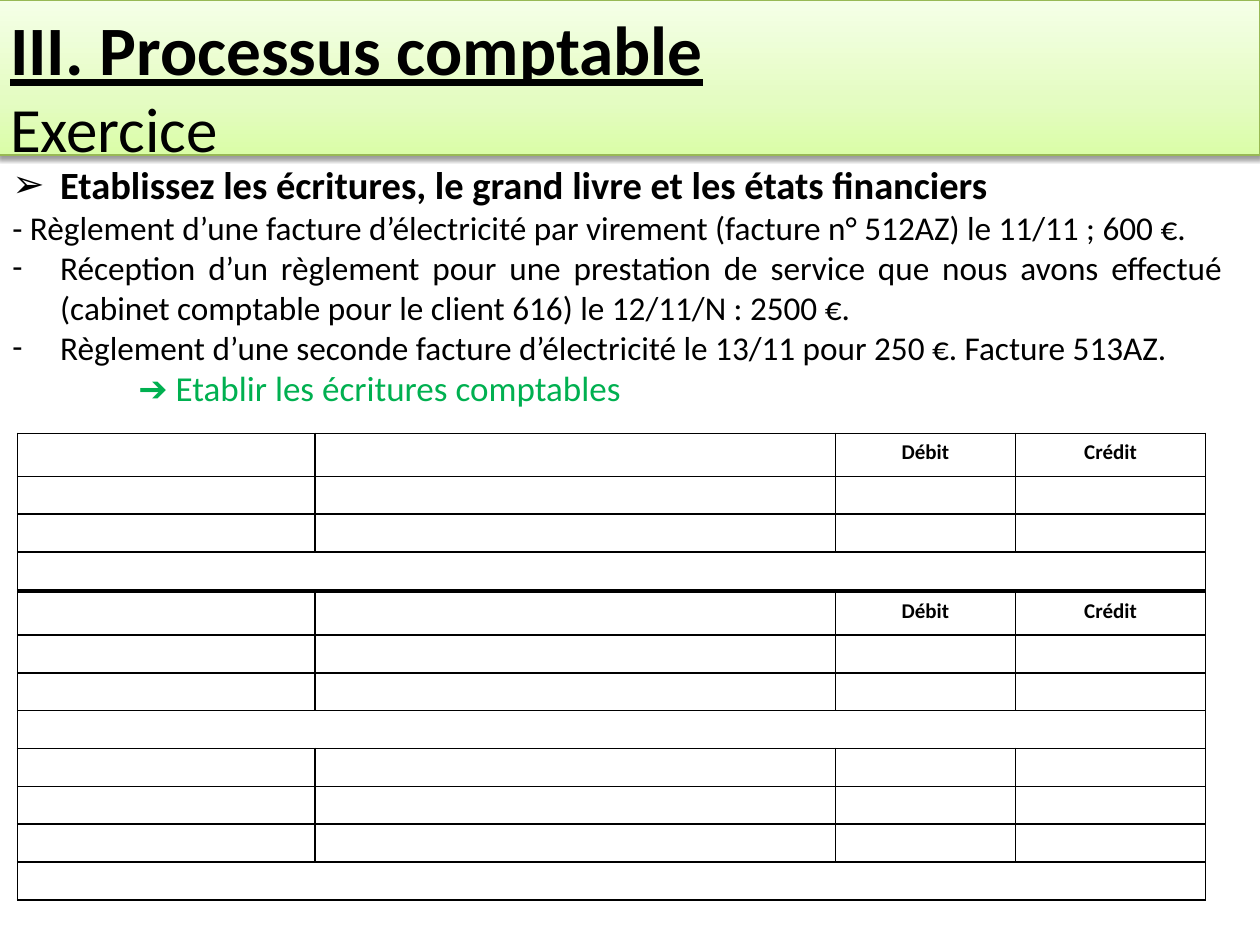
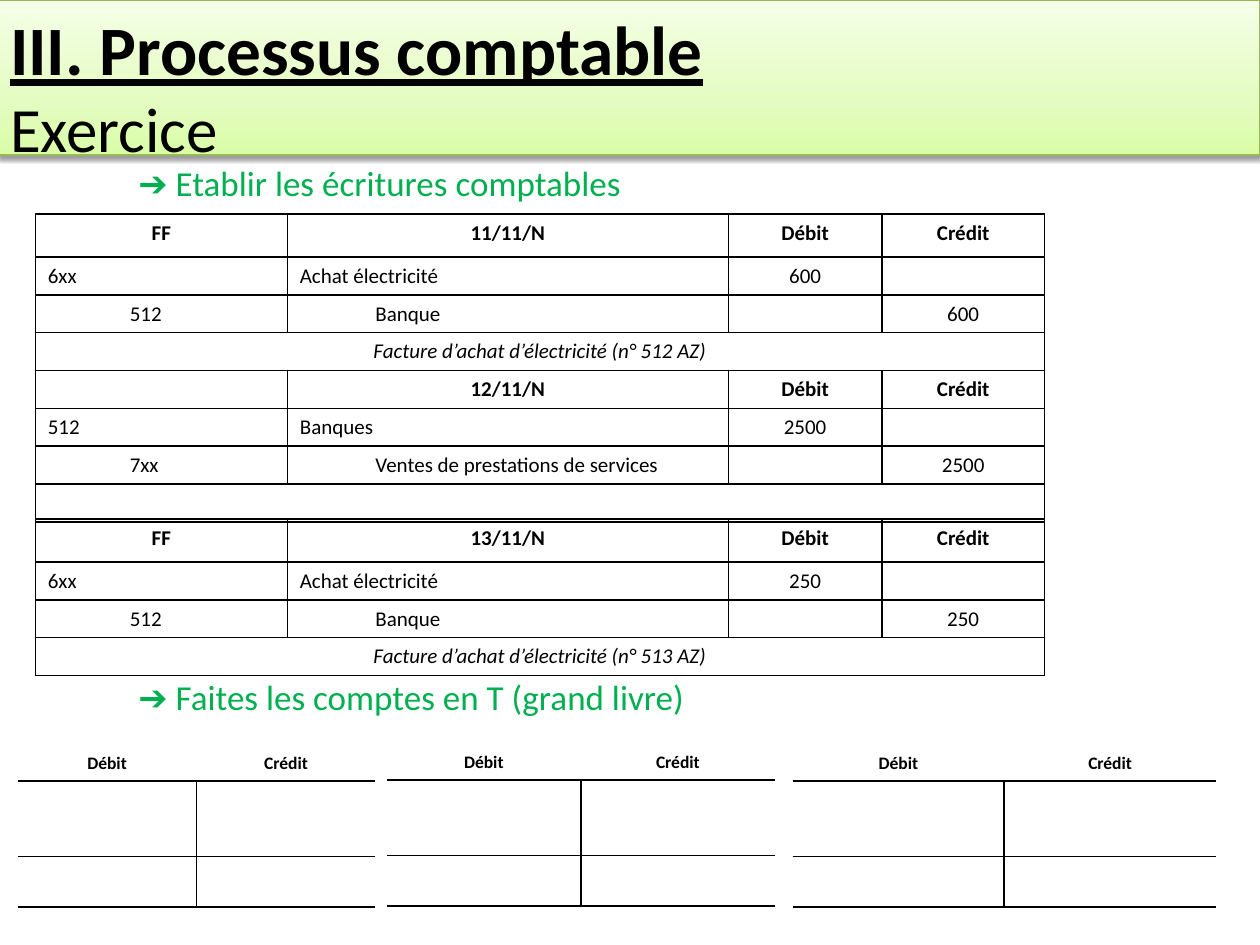
from dataclasses import dataclass

from lxml.etree import SubElement
from pptx import Presentation
from pptx.dml.color import RGBColor
from pptx.enum.text import MSO_ANCHOR, MSO_AUTO_SIZE, PP_ALIGN
from pptx.oxml.ns import qn
from pptx.util import Inches, Pt


@dataclass(frozen=True)
class Theme:
    font: str = "Calibri"
    black: str = "000000"
    green: str = "00B050"
    band_line: str = "98B955"
    band_stops: tuple = ((0, "DAFDA7"), (35, "E4FCC2"), (100, "F5FFE7"))
    title: float = 39.6
    subtitle: float = 36
    heading: float = 22
    body: float = 19
    step: float = 20
    entry: float = 12
    ledger: float = 10


THEME = Theme()
NO_GRID = "{2D5ABB26-0587-4C30-8999-92F81FD0307C}"
ENTRY_COLS = (0.77, 1.59, 0.71, 3.42, 1.43, 1.51)
ENTRY_COLS_NARROW = (0.65, 1.35, 0.6, 2.9, 1.22, 1.29)
ENTRY_GROUPS = ((0, 1), (2, 3), (4, 4), (5, 5))
ROW = 0.3
TALL_ROW = 0.34


def child(parent, tag, **attrs):
    return SubElement(parent, qn(f"a:{tag}"), {k: str(v) for k, v in attrs.items()})


def add_color(parent, color):
    return child(child(parent, "solidFill"), "srgbClr", val=color)


def add_run(p, text, color=THEME.black, **formats):
    r = p.add_run()
    r.text = text
    r.font.color.rgb = RGBColor.from_string(color)
    for name, value in {"name": THEME.font, **formats}.items():
        setattr(r.font, name, value)


def set_indent(p, left, first=0.0, bullet=None):
    pPr = p._p.get_or_add_pPr()
    pPr.set("marL", str(Inches(left)))
    pPr.set("indent", str(Inches(first)))
    if bullet:
        child(pPr, "buFont", typeface=THEME.font)
        child(pPr, "buChar", char=bullet)


def place(sp, box):
    for name, value in zip(("left", "top", "width", "height"), box):
        setattr(sp, name, Inches(value))


def add_title_band(s, box):
    sp = s.shapes.title
    place(sp, box)
    spPr = sp._element.spPr
    grad = child(spPr, "gradFill", rotWithShape=1)
    stops = child(grad, "gsLst")
    for pos, color in THEME.band_stops:
        child(child(stops, "gs", pos=pos * 1000), "srgbClr", val=color)
    child(grad, "lin", ang=270 * 60000, scaled=0)
    sp.line.color.rgb = RGBColor.from_string(THEME.band_line)
    sp.line.width = Pt(0.75)
    shadow = child(child(spPr, "effectLst"), "outerShdw", blurRad=Pt(3.1),
                   dist=Pt(1.6), dir=90 * 60000, rotWithShape=0)
    child(child(shadow, "srgbClr", val=THEME.black), "alpha", val=38000)

    tf = sp.text_frame
    formats = {"word_wrap": True, "auto_size": MSO_AUTO_SIZE.NONE,
               "vertical_anchor": MSO_ANCHOR.TOP}
    for name, value in formats.items():
        setattr(tf, name, value)
    p = tf.paragraphs[0]
    p.alignment = PP_ALIGN.LEFT
    add_run(p, "III. Processus comptable", size=Pt(THEME.title), bold=True, underline=True)
    p = tf.add_paragraph()
    p.alignment = PP_ALIGN.LEFT
    add_run(p, "Exercice", size=Pt(THEME.subtitle), bold=False, underline=False)


def add_body(s, box):
    tf = s.shapes.add_textbox(*map(Inches, box)).text_frame
    tf.word_wrap = True
    return tf


def next_paragraph(tf):
    p = tf.paragraphs[0]
    return tf.add_paragraph() if p.runs else p


def add_step(tf, text, gap=0):
    p = next_paragraph(tf)
    p.alignment = PP_ALIGN.JUSTIFY
    p.space_before = Pt(gap)
    set_indent(p, 1)
    add_run(p, f"➔ {text}", THEME.green, size=Pt(THEME.step))


def add_instructions(tf, heading, operations):
    p = next_paragraph(tf)
    set_indent(p, 0.38, -0.38, "➢")
    add_run(p, heading, size=Pt(THEME.heading), bold=True)
    for text, bullet in operations:
        p = next_paragraph(tf)
        p.alignment = PP_ALIGN.JUSTIFY
        if bullet:
            set_indent(p, 0.38, -0.38, bullet)
        add_run(p, text, size=Pt(THEME.body))


def add_grid(s, left, top, cols, rows):
    frame = s.shapes.add_table(len(rows), len(cols), Inches(left), Inches(top),
                               Inches(sum(cols)), Inches(sum(rows)))
    table = frame.table
    table.first_row = table.horz_banding = False
    table._tbl.tblPr.find(qn("a:tableStyleId")).text = NO_GRID
    for column, width in zip(table.columns, cols):
        column.width = Inches(width)
    for row, height in zip(table.rows, rows):
        row.height = Inches(height)
    return table


def set_cell(cell, text, sides, size, align=PP_ALIGN.CENTER, **formats):
    tcPr = cell._tc.get_or_add_tcPr()
    for side in "LRTB":
        ln = child(tcPr, f"ln{side}", w=Pt(1))
        if side in sides:
            add_color(ln, THEME.black)
        else:
            child(ln, "noFill")
    cell.fill.background()
    p = cell.text_frame.paragraphs[0]
    p.alignment = align
    if text:
        add_run(p, text, size=Pt(size), **formats)
    else:
        child(p._p, "endParaRPr", sz=int(size * 100))


def add_entry(s, left, top, cols, header=("", "", "", ""), debit=("", "", ""),
              credit=("", "", ""), note="", first_row=TALL_ROW):
    table = add_grid(s, left, top, cols, (first_row, ROW, ROW, ROW))
    texts = {(0, 0): header[0], (0, 2): header[1], (0, 4): header[2], (0, 5): header[3],
             (1, 0): debit[0], (1, 2): debit[1], (1, 4): debit[2],
             (2, 1): credit[0], (2, 3): credit[1], (2, 5): credit[2], (3, 0): note}
    for i in range(4):
        for a, b in ENTRY_GROUPS if i < 3 else ((0, 5),):
            for j in range(a, b + 1):
                sides = "TB" + "L" * (i != 2 or j == a) + "R" * (i != 2 or j == b)
                is_label = i in (1, 2) and j < 4
                set_cell(table.cell(i, j), texts.get((i, j), ""), sides, THEME.entry,
                         PP_ALIGN.LEFT if is_label else PP_ALIGN.CENTER,
                         bold=i == 0, italic=i == 3)
            if b > a and i != 2:
                table.cell(i, a).merge(table.cell(i, b))


def add_ledger(s, left, top, col, first_row):
    table = add_grid(s, left, top, (col, col), (first_row, 0.27, 0.6, 0.4, 0.3))
    for i, sides in enumerate(("", "B", "TB", "TB", "T")):
        for j, (text, inner) in enumerate((("Débit", "R"), ("Crédit", "L"))):
            set_cell(table.cell(i, j), text if i == 1 else "",
                     sides + (inner if i in (2, 3) else ""), THEME.ledger, bold=True)
    for i in (0, 4):
        table.cell(i, 0).merge(table.cell(i, 1))


def add_exercise_slide(prs):
    s = prs.slides.add_slide(prs.slide_layouts[5])
    add_title_band(s, (-0.02, 0, 10.02, 1.23))
    return s


def build_statement(prs):
    s = add_exercise_slide(prs)
    tf = add_body(s, (0, 1.23, 9.8, 4.86))
    add_instructions(tf, "Etablissez les écritures, le grand livre et les états financiers", (
        ("- Règlement d’une facture d’électricité par virement "
         "(facture n° 512AZ) le 11/11 ; 600 €.", None),
        ("Réception d’un règlement pour une prestation de service que nous avons effectué "
         "(cabinet comptable pour le client 616) le 12/11/N : 2500 €.", "-"),
        ("Règlement d’une seconde facture d’électricité le 13/11 pour 250 €. "
         "Facture 513AZ.", "-"),
    ))
    add_step(tf, "Etablir les écritures comptables")
    blank_header = ("", "", "Débit", "Crédit")
    add_entry(s, 0.14, 3.44, ENTRY_COLS, blank_header)
    add_entry(s, 0.14, 5.94, ENTRY_COLS, first_row=ROW)
    add_entry(s, 0.14, 4.7, ENTRY_COLS, blank_header)


def build_answers(prs):
    s = add_exercise_slide(prs)
    tf = add_body(s, (0, 1.23, 9.8, 4.56))
    add_step(tf, "Etablir les écritures comptables")
    add_step(tf, "Faites les comptes en T (grand livre)", gap=270)
    for left, top, col, first_row in ((0.14, 5.66, 1.42, 0.26), (3.07, 5.53, 1.54, 0.39),
                                      (6.29, 5.66, 1.68, 0.26)):
        add_ledger(s, left, top, col, first_row)

    entries = (
        (1.7, "FF", "11/11/N", ("6xx", "Achat électricité"), ("512", "Banque"), "600",
         "Facture d’achat d’électricité (n° 512 AZ)", TALL_ROW),
        (2.94, "", "12/11/N", ("512", "Banques"), ("7xx", "Ventes de prestations de services"),
         "2500", "", ROW),
        (4.12, "FF", "13/11/N", ("6xx", "Achat électricité"), ("512", "Banque"), "250",
         "Facture d’achat d’électricité (n° 513 AZ)", TALL_ROW),
    )
    for top, journal, date, debit, credit, amount, note, first_row in entries:
        add_entry(s, 0.28, top, ENTRY_COLS_NARROW, (journal, date, "Débit", "Crédit"),
                  (*debit, amount), (*credit, amount), note, first_row)


def main():
    prs = Presentation()
    prs.slide_width, prs.slide_height = Inches(10), Inches(7.5)
    build_statement(prs)
    build_answers(prs)
    prs.save("out.pptx")


if __name__ == "__main__":
    main()
